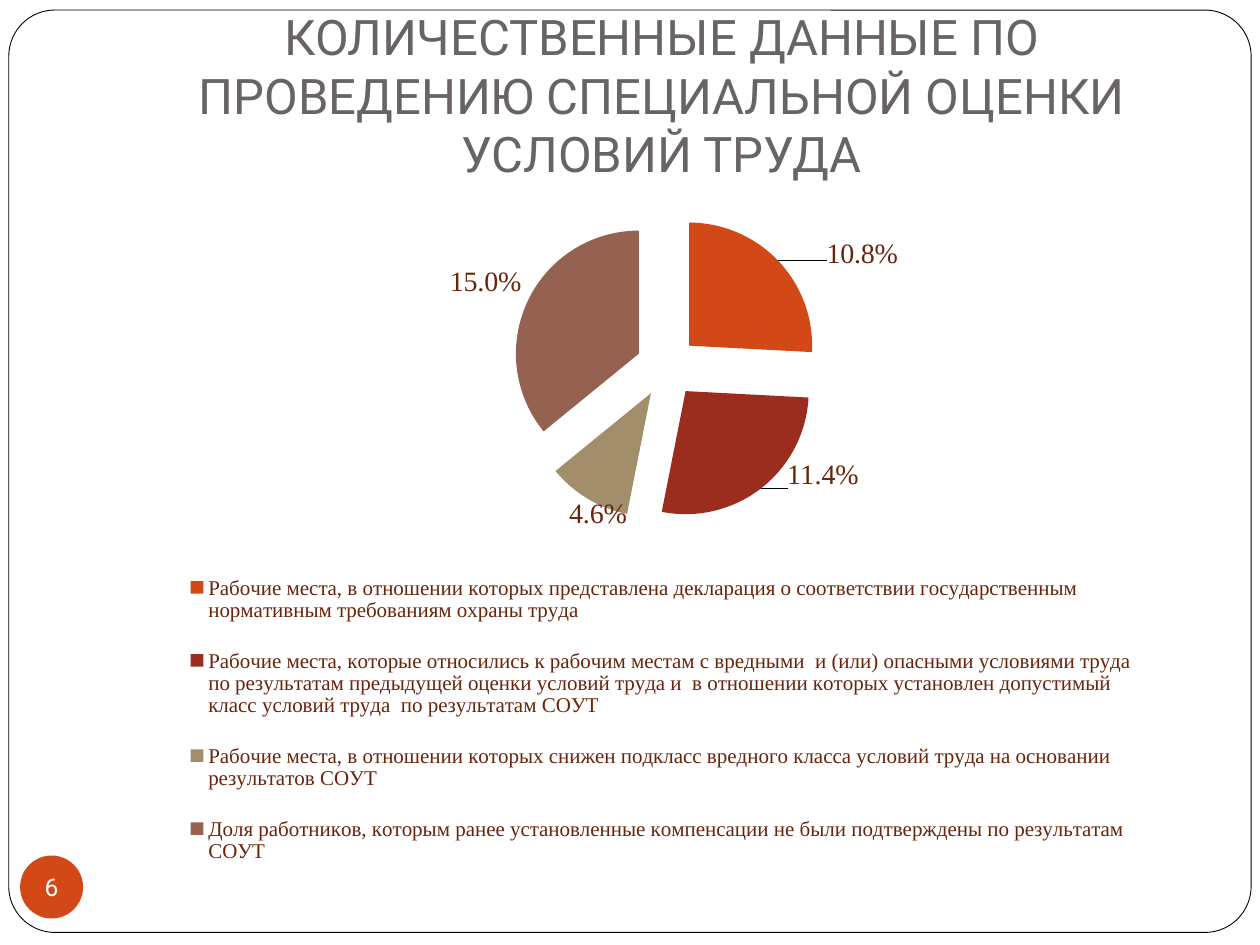
from dataclasses import dataclass

from lxml import etree
from pptx import Presentation
from pptx.chart.data import CategoryChartData
from pptx.dml.color import RGBColor
from pptx.enum import chart as charts, shapes, text
from pptx.oxml import ns
from pptx.util import Inches, Pt


@dataclass(frozen=True)
class Theme:
    heading_font: str = "Roboto"
    chart_font: str = "Times New Roman"
    paper: str = "FFFFFF"
    border: str = "000000"
    heading: str = "696464"
    accent: str = "D34817"
    chart_text: str = "69240C"
    slices: tuple = ("D34817", "9B2D1F", "A28E6A", "956251")
    heading_size: int = 28
    number_size: int = 14
    label_size: int = 16
    legend_size: int = 12


THEME = Theme()
TITLE = "КОЛИЧЕСТВЕННЫЕ ДАННЫЕ ПО ПРОВЕДЕНИЮ СПЕЦИАЛЬНОЙ ОЦЕНКИ УСЛОВИЙ ТРУДА"
SHARES = {
    "Рабочие места, в отношении которых представлена декларация о соответствии "
    "государственным нормативным требованиям охраны труда": 0.108,
    "Рабочие места, которые относились к рабочим местам с вредными  и (или) опасными "
    "условиями труда по результатам предыдущей оценки условий труда и  в отношении "
    "которых установлен допустимый класс условий труда  по результатам СОУТ": 0.114,
    "Рабочие места, в отношении которых снижен подкласс вредного класса условий труда "
    "на основании результатов СОУТ": 0.046,
    "Доля работников, которым ранее установленные компенсации не были подтверждены "
    "по результатам СОУТ": 0.15,
}
LABEL_SHIFTS = ((0.04, 0.02), (0.02, -0.05), (0.04, -0.01), (0, 0))


def style_font(font, name, size, color):
    font.name = name
    font.size = Pt(size)
    font.color.rgb = RGBColor.from_string(color)


def fill_solid(part, color):
    part.fill.solid()
    part.fill.fore_color.rgb = RGBColor.from_string(color)


def set_margins(frame, left, top, right, bottom):
    frame.margin_left, frame.margin_top = Inches(left), Inches(top)
    frame.margin_right, frame.margin_bottom = Inches(right), Inches(bottom)


def write_centred(frame, wording, size, color):
    frame.text = wording
    paragraph = frame.paragraphs[0]
    paragraph.alignment = text.PP_ALIGN.CENTER
    style_font(paragraph.runs[0].font, THEME.heading_font, size, color)


def manual_layout(**settings):
    layout = etree.Element(ns.qn("c:layout"))
    manual = etree.SubElement(layout, ns.qn("c:manualLayout"))
    for tag, value in settings.items():
        etree.SubElement(manual, ns.qn(f"c:{tag}")).set("val", str(value))
    return layout


def replace_layout(parent, position, **settings):
    for old_layout in parent.findall(ns.qn("c:layout")):
        parent.remove(old_layout)
    parent.insert(position, manual_layout(**settings))


def add_border(slide, box):
    border = slide.shapes.add_shape(shapes.MSO_SHAPE.ROUNDED_RECTANGLE, *map(Inches, box))
    border.adjustments[0] = 0.05
    border.shadow.inherit = False
    fill_solid(border, THEME.paper)
    border.line.color.rgb = RGBColor.from_string(THEME.border)
    border.line.width = Pt(0.5)


def add_heading(slide, box):
    frame = slide.shapes.add_textbox(*map(Inches, box)).text_frame
    frame.word_wrap = True
    frame.vertical_anchor = text.MSO_ANCHOR.BOTTOM
    set_margins(frame, 0.1, 0.05, 0.1, 0.1)
    write_centred(frame, TITLE, THEME.heading_size, THEME.heading)


def add_page_number(slide, box, number):
    badge = slide.shapes.add_shape(shapes.MSO_SHAPE.OVAL, *map(Inches, box))
    badge.shadow.inherit = False
    fill_solid(badge, THEME.accent)
    badge.line.fill.background()
    frame = badge.text_frame
    frame.word_wrap = False
    frame.vertical_anchor = text.MSO_ANCHOR.MIDDLE
    set_margins(frame, 0, 0, 0, 0)
    write_centred(frame, str(number), THEME.number_size, THEME.paper)


def add_shares_pie(slide, box):
    data = CategoryChartData(number_format="0.0%")
    data.categories = list(SHARES)
    data.add_series("Доля", list(SHARES.values()))
    pie = slide.shapes.add_chart(charts.XL_CHART_TYPE.PIE, *map(Inches, box), data).chart
    pie.has_title = False
    style_font(pie.font, THEME.chart_font, THEME.label_size, THEME.chart_text)

    pie.has_legend = True
    pie.legend.position = charts.XL_LEGEND_POSITION.BOTTOM
    pie.legend.include_in_layout = False
    style_font(pie.legend.font, THEME.chart_font, THEME.legend_size, THEME.chart_text)
    replace_layout(pie.legend._element, 1, xMode="edge", yMode="edge",
                   x=0.05, y=0.5, w=0.9, h=0.49)

    plot_area = pie.plots[0]._element.getparent()
    replace_layout(plot_area, 0, layoutTarget="inner", xMode="edge", yMode="edge",
                   x=0.01, y=0.02, w=0.99, h=0.44)

    shares = pie.plots[0].series[0]
    labels = shares.data_labels
    labels.show_value = True
    labels.number_format = "0.0%"
    labels.number_format_is_linked = False
    labels.position = charts.XL_LABEL_POSITION.OUTSIDE_END
    style_font(labels.font, THEME.chart_font, THEME.label_size, THEME.chart_text)

    for index, (color, (dx, dy)) in enumerate(zip(THEME.slices, LABEL_SHIFTS)):
        point = shares.points[index]
        fill_solid(point.format, color)
        label = point.data_label
        label.position = charts.XL_LABEL_POSITION.OUTSIDE_END
        style_font(label.font, THEME.chart_font, THEME.label_size, THEME.chart_text)
        label_xml = labels._element.findall(ns.qn("c:dLbl"))[index]
        label_xml.insert(1, manual_layout(x=dx, y=dy))

    explosion = etree.Element(ns.qn("c:explosion"), val="25")
    shares._element.find(ns.qn("c:dPt")).addprevious(explosion)


def main():
    deck = Presentation()
    deck.slide_width, deck.slide_height = Inches(10), Inches(7.5)
    slide = deck.slides.add_slide(deck.slide_layouts[6])
    fill_solid(slide.background, THEME.paper)
    add_border(slide, (0.07, 0.08, 9.86, 7.32))
    add_heading(slide, (1, 0.3, 8.5, 1.25))
    add_page_number(slide, (0.16, 6.79, 0.5, 0.5), 6)
    add_shares_pie(slide, (1, 1.58, 8.5, 5.55))
    deck.save("out.pptx")


if __name__ == "__main__":
    main()
